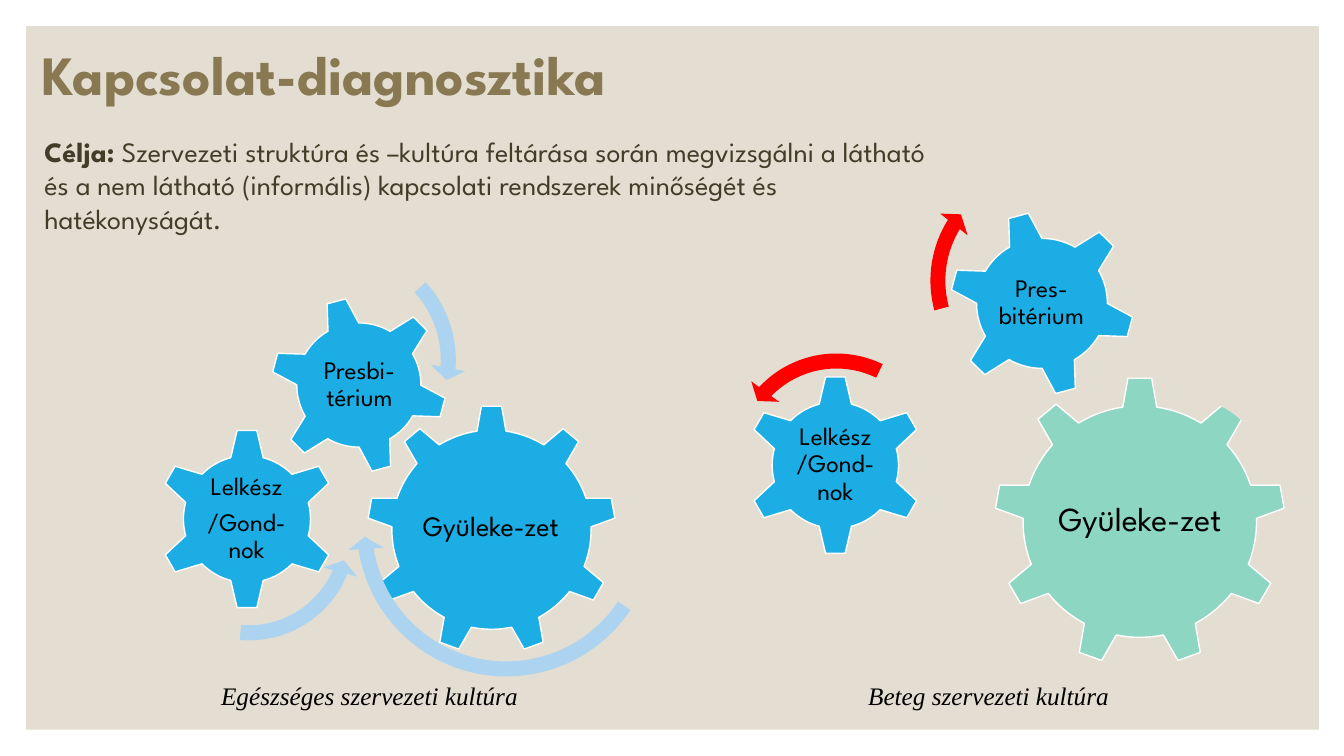
"""Builds the slide comparing a healthy and a sick organisational culture as gears."""
from pptx import Presentation
from pptx.dml.color import RGBColor
from pptx.enum.shapes import MSO_SHAPE as Shape
from pptx.enum.text import MSO_ANCHOR as Anchor, MSO_AUTO_SIZE as AutoSize, PP_ALIGN as Align
from pptx.util import Inches, Pt

COLORS = {
    "panel": "E3DED1", "title": "887952", "body": "443C29", "black": "000000", "white": "FFFFFF",
    "blue": "1CADE4", "mint": "8DD6C1", "pale": "ACD3EF", "red": "FF0000",
}
HEADING_FONT, CAPTION_FONT = "League Spartan", "Times New Roman"

TITLE = "Kapcsolat-diagnosztika"
PURPOSE = [
    ("Célja:", True),
    (" Szervezeti struktúra és –kultúra feltárása során megvizsgálni a látható és a nem látható "
     "(informális) kapcsolati rendszerek minőségét és hatékonyságát.", False),
]

ARROW_KINDS = {
    "congregation": (Shape.CIRCULAR_ARROW, (0.047, 2.99, 25.14, 158.66, 0.055)),
    "pastor": (Shape.LEFT_CIRCULAR_ARROW, (0.065, 4.3, 104.891, 148.378, 0.075)),
    "presbytery": (Shape.CIRCULAR_ARROW, (0.06, 3.941, 133.138, 105.082, 0.07)),
}

CULTURES = [
    {
        "caption": ("Egészséges szervezeti kultúra", (1.92, 6.7, 3.49, 0.4)),
        "gears": [
            (Shape.GEAR_9, (3.64, 4.02, 2.47, 2.47), 0, "blue",
             "Gyüleke-zet", (4.13, 4.6, 1.48, 1.27), 20),
            (Shape.GEAR_6, (1.55, 4.25, 1.8, 1.8), 0, "blue",
             "Lelkész\n/Gond-nok", (2, 4.7, 0.89, 0.89), 18),
            (Shape.GEAR_6, (2.68, 2.94, 1.76, 1.76), 345, "blue",
             "Presbi-térium", (3.07, 3.32, 0.99, 0.99), 18),
        ],
        "arrows": [
            ("congregation", (3.44, 3.65, 3.16, 3.16), 129.3, "pale"),
            ("pastor", (1.32, 4.15, 2.3, 2.3), 207.7, "pale"),
            ("presbytery", (2.14, 2.33, 2.48, 2.48), 142.4, "pale"),
        ],
    },
    {
        "caption": ("Beteg szervezeti kultúra", (8.06, 6.7, 3.49, 0.4)),
        "gears": [
            (Shape.GEAR_9, (9.86, 3.74, 2.89, 2.87), 0, "mint",
             "Gyüleke-zet", (10.44, 4.42, 1.73, 1.48), 24),
            (Shape.GEAR_6, (7.39, 3.72, 1.79, 1.79), 0, "blue",
             "Lelkész/Gond-nok", (7.84, 4.17, 0.89, 0.88), 18),
            (Shape.GEAR_6, (9.41, 2.09, 1.85, 1.84), 345, "blue",
             "Pres-bitérium", (9.81, 2.49, 1.04, 1.03), 18),
        ],
        "arrows": [
            ("congregation", (9.9, 3.62, 3.15, 3.15), 25.7, "panel"),
            ("pastor", (7.15, 3.41, 2.29, 2.29), 48.7, "red"),
            ("presbytery", (9.13, 1.55, 2.47, 2.47), 349.8, "red"),
        ],
    },
]


def rgb(name):
    return RGBColor.from_string(COLORS[name])


def inches(box):
    return [Inches(length) for length in box]


def style_run(run, size, color, font=HEADING_FONT, bold=False, italic=False):
    run.font.size, run.font.name = Pt(size), font
    run.font.bold, run.font.italic = bold, italic
    run.font.color.rgb = rgb(color)


def add_filled(shapes, kind, box, color, rotation=0, outlined=False):
    shape = shapes.add_shape(kind, *inches(box))
    shape.shadow.inherit = False
    shape.rotation = rotation
    shape.fill.solid()
    shape.fill.fore_color.rgb = rgb(color)
    if outlined:
        shape.line.color.rgb = rgb("white")
        shape.line.width = Pt(1)
    else:
        shape.line.fill.background()
    return shape


def add_text_frame(shapes, box, margin=None):
    frame = shapes.add_textbox(*inches(box)).text_frame
    frame.word_wrap = True
    if margin is not None:
        frame.margin_left = frame.margin_right = Inches(margin)
        frame.margin_top = frame.margin_bottom = Inches(margin)
    return frame


def add_gear(shapes, kind, box, rotation, color, label, label_box, size):
    add_filled(shapes, kind, box, color, rotation, outlined=True)
    frame = add_text_frame(shapes, label_box, 0.03)
    frame.vertical_anchor = Anchor.MIDDLE
    frame.text = label
    for paragraph in frame.paragraphs:
        paragraph.alignment = Align.CENTER
        paragraph.line_spacing = 0.9
        paragraph.space_after = Pt(0.35 * size)
        style_run(paragraph.runs[0], size, "black")


def add_arrow(shapes, role, box, rotation, color):
    kind, adjustments = ARROW_KINDS[role]
    arrow = add_filled(shapes, kind, box, color, rotation)
    for index, value in enumerate(adjustments):
        arrow.adjustments[index] = value


def add_caption(shapes, text, box):
    frame = add_text_frame(shapes, box)
    frame.text = text
    paragraph = frame.paragraphs[0]
    paragraph.alignment = Align.CENTER
    style_run(paragraph.runs[0], 18, "black", CAPTION_FONT, italic=True)


def add_title(slide):
    title = slide.shapes.title
    title.left, title.top, title.width, title.height = inches((0.32, 0.39, 6.97, 0.72))
    frame = title.text_frame
    frame.text = TITLE
    frame.auto_size = AutoSize.NONE
    frame.vertical_anchor = Anchor.BOTTOM
    paragraph = frame.paragraphs[0]
    paragraph.alignment = Align.LEFT
    paragraph.space_before = Pt(12)
    style_run(paragraph.runs[0], 39.6, "title", bold=True)
    return title


def add_purpose(shapes):
    paragraph = add_text_frame(shapes, (0.44, 1.33, 8.8, 1.01), 0).paragraphs[0]
    for text, bold in PURPOSE:
        run = paragraph.add_run()
        run.text = text
        style_run(run, 20, "body", bold=bold)


def main():
    presentation = Presentation()
    presentation.slide_width, presentation.slide_height = Inches(13.33), Inches(7.5)
    slide = presentation.slides.add_slide(presentation.slide_layouts[5])
    panel = add_filled(slide.shapes, Shape.RECTANGLE, (0.26, 0.26, 12.82, 6.98), "panel")
    title = add_title(slide)
    title.element.addprevious(panel.element)
    add_purpose(slide.shapes)
    for culture in CULTURES:
        group = slide.shapes.add_group_shape()
        for gear in culture["gears"]:
            add_gear(group.shapes, *gear)
        for arrow in culture["arrows"]:
            add_arrow(group.shapes, *arrow)
    for culture in CULTURES:
        add_caption(slide.shapes, *culture["caption"])
    presentation.save("out.pptx")


if __name__ == "__main__":
    main()
